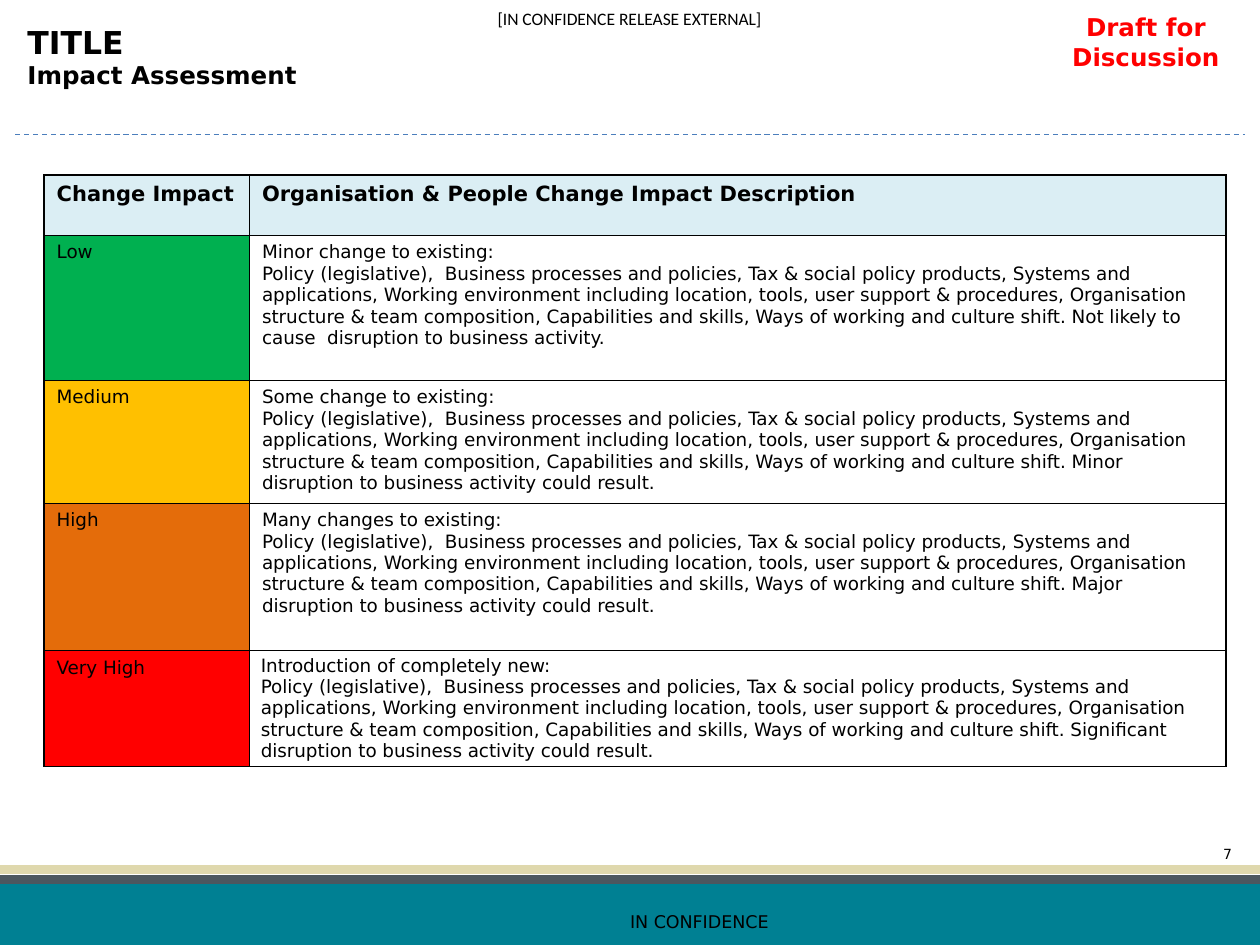
from lxml import etree
from pptx import Presentation
from pptx import util as u
from pptx.dml.color import RGBColor
from pptx.enum import dml, shapes, text
from pptx.oxml.ns import qn

FONT = "DejaVu Sans"
COMMON = ("Policy (legislative),  Business processes and policies, Tax & social policy products, "
          "Systems and applications, Working environment including location, tools, user support "
          "& procedures, Organisation structure & team composition, Capabilities and skills, "
          "Ways of working and culture shift. ")
HEADINGS = ("Change Impact", "Organisation & People Change Impact Description")
# Level, colour, row height, opening line, closing sentence
IMPACTS = [
    ("Low", "00B050", 1.15, "Minor change to existing:",
     "Not likely to cause  disruption to business activity."),
    ("Medium", "FFC000", 0.97, "Some change to existing:",
     "Minor disruption to business activity could result."),
    ("High", "E46C0A", 1.17, "Many changes to existing:",
     "Major disruption to business activity could result."),
    ("Very High", "FF0000", 0.92, "Introduction of completely new:",
     "Significant disruption to business activity could result."),
]


def paint(fill, color):
    fill.solid()
    fill.fore_color.rgb = RGBColor.from_string(color)


def write(frame, *lines, size=10.5, sizes=None, bold=False, color="000000",
          font=FONT, align=text.PP_ALIGN.LEFT, indent=0):
    frame.word_wrap = True
    for i, line in enumerate(lines):
        para = frame.paragraphs[0] if i == 0 else frame.add_paragraph()
        para.alignment = align
        if indent:
            para._p.get_or_add_pPr().set("marL", str(u.Inches(indent)))
        run = para.add_run()
        run.text = line
        run.font.name = font
        run.font.size = u.Pt(sizes[i] if sizes else size)
        run.font.bold = bold
        run.font.color.rgb = RGBColor.from_string(color)


def add_text(slide, box, *lines, **style):
    frame = slide.shapes.add_textbox(*map(u.Inches, box)).text_frame
    write(frame, *lines, **style)
    return frame


def add_rule(slide, left, top, width, color, weight, dash=None):
    rule = slide.shapes.add_connector(
        shapes.MSO_CONNECTOR.STRAIGHT,
        *map(u.Inches, (left, top, left + width, top)))
    paint(rule.line.fill, color)
    rule.line.width = u.Pt(weight)
    if dash:
        rule.line.dash_style = dash
    etree.SubElement(rule._element.spPr, qn("a:effectLst"))


def add_footer(slide, left, top, width, height):
    band = slide.shapes.add_shape(shapes.MSO_SHAPE.RECTANGLE,
                                  *map(u.Inches, (left, top, width, height)))
    band.shadow.inherit = False
    paint(band.fill, "008093")
    band.line.fill.background()
    add_rule(slide, left, top, width, "4C575F", 5)
    add_rule(slide, left, top - 0.08, width, "DFD8AD", 5)
    add_text(slide, (left + width - 0.39, top - 0.32, 0.51, 0.24), "7", size=8)
    add_text(slide, (left + 2.95, top + 0.2, 5.2, 0.27), "IN CONFIDENCE",
             size=10, align=text.PP_ALIGN.CENTER)


def add_header(slide, left, top, width, height):
    # Classification marking
    marking = add_text(slide, (left + 3.65, top, 2.45, 0.29),
                       "[IN CONFIDENCE RELEASE EXTERNAL]",
                       size=10, font="Calibri", align=text.PP_ALIGN.CENTER)
    marking.margin_left = marking.margin_right = 0
    marking.margin_top = marking.margin_bottom = 0
    marking.vertical_anchor = text.MSO_ANCHOR.MIDDLE
    # Title, draft stamp and dividing rule
    add_rule(slide, left, top + height, width, "4B7EBC", 0.75, dml.MSO_LINE.DASH)
    add_text(slide, (left, top + 0.13, width, 0.64), "TITLE", "Impact Assessment",
             sizes=(18, 14), bold=True)
    add_text(slide, (left + 8.11, top + 0.05, 1.73, 0.57), "Draft for Discussion",
             size=14, bold=True, color="FF0000", align=text.PP_ALIGN.CENTER)


def add_borders(cell):
    props = cell._tc.get_or_add_tcPr()
    for i, side in enumerate(("lnL", "lnR", "lnT", "lnB")):
        border = etree.Element(qn(f"a:{side}"), w=str(u.Pt(1)))
        fill = etree.SubElement(border, qn("a:solidFill"))
        etree.SubElement(fill, qn("a:srgbClr"), val="000000")
        props.insert(i, border)


def add_impact_table(slide, left, top, width, height):
    frame = slide.shapes.add_table(len(IMPACTS) + 1, 2,
                                   *map(u.Inches, (left, top, width, height)))
    table = frame.table
    table.first_row = table.horz_banding = False
    level_width = 1.63
    table.columns[0].width = u.Inches(level_width)
    table.columns[1].width = u.Inches(width - level_width)

    # Heading row takes the height the impact rows leave
    table.rows[0].height = u.Inches(height - sum(impact[2] for impact in IMPACTS))
    for col, heading in enumerate(HEADINGS):
        cell = table.cell(0, col)
        write(cell.text_frame, heading, size=12, bold=True)
        paint(cell.fill, "DBEEF4")

    # One row for each impact level
    for row, (level, color, row_height, opening, closing) in enumerate(IMPACTS, 1):
        table.rows[row].height = u.Inches(row_height)
        level_cell, description = table.cell(row, 0), table.cell(row, 1)
        write(level_cell.text_frame, level)
        paint(level_cell.fill, color)
        last = row == len(IMPACTS)
        write(description.text_frame, opening, COMMON + closing,
              indent=0.09 if last else 0)
        paint(description.fill, "FFFFFF")
        if last:
            description.margin_left = description.margin_right = 0
            description.margin_top = description.margin_bottom = 0
            description.vertical_anchor = text.MSO_ANCHOR.MIDDLE

    for cell in table.iter_cells():
        add_borders(cell)


def main():
    prs = Presentation()
    prs.slide_width, prs.slide_height = u.Inches(10), u.Inches(7.5)
    slide = prs.slides.add_slide(prs.slide_layouts[6])
    add_footer(slide, 0, 6.98, 10, 0.52)
    add_header(slide, 0.12, 0, 9.76, 1.07)
    add_impact_table(slide, 0.35, 1.39, 9.38, 4.69)
    prs.save("out.pptx")


if __name__ == "__main__":
    main()
